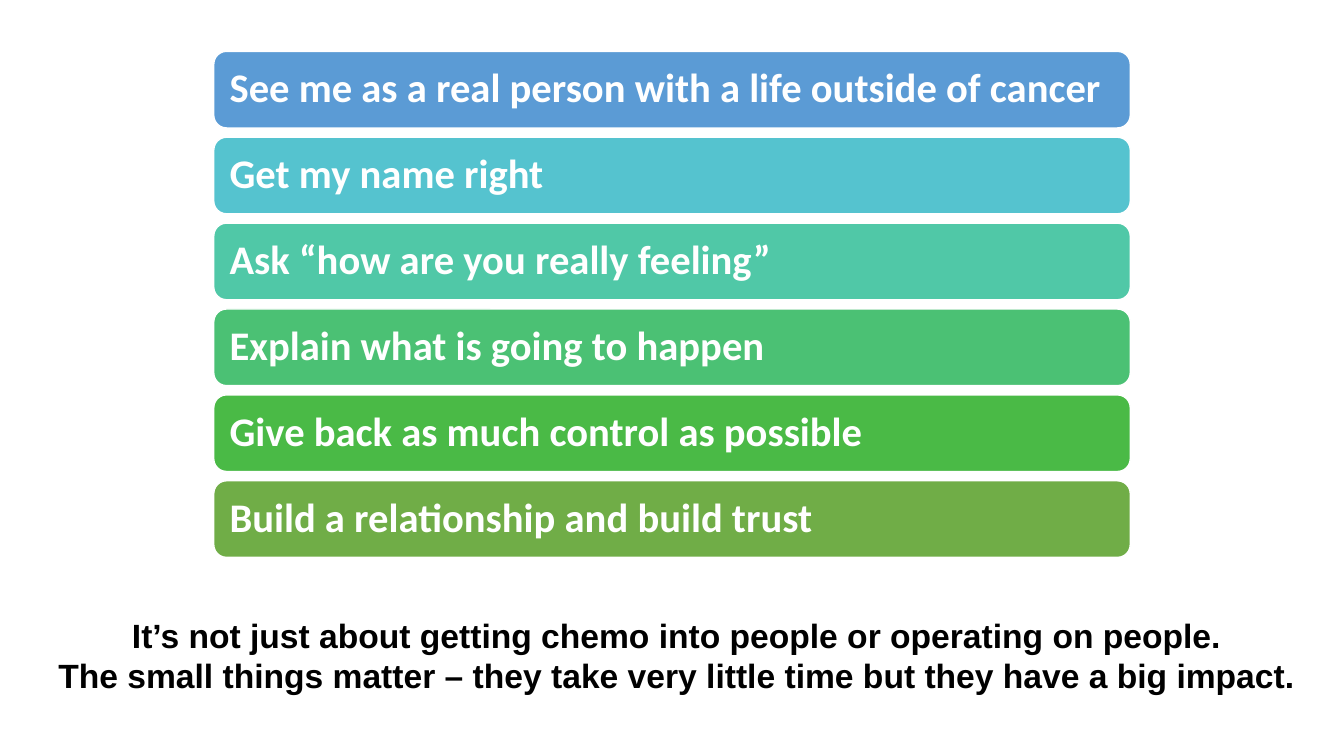
from pptx import Presentation
from pptx import util as u
from pptx.dml.color import RGBColor
from pptx.enum import shapes, text

WHITE = RGBColor(0xFF, 0xFF, 0xFF)
BLACK = RGBColor(0x00, 0x00, 0x00)
BLUE = RGBColor(0x5B, 0x9B, 0xD5)
CYAN = RGBColor(0x55, 0xC3, 0xCF)
TEAL = RGBColor(0x50, 0xC8, 0xA7)
MINT = RGBColor(0x4B, 0xC1, 0x74)
GREEN = RGBColor(0x4A, 0xBA, 0x46)
OLIVE = RGBColor(0x70, 0xAD, 0x47)

WISHES = [
    ("See me as a real person with a life outside of cancer", BLUE),
    ("Get my name right", CYAN),
    ("Ask “how are you really feeling”", TEAL),
    ("Explain what is going to happen", MINT),
    ("Give back as much control as possible", GREEN),
    ("Build a relationship and build trust", OLIVE),
]
CLOSING = [
    "It’s not just about getting chemo into people or operating on people.",
    "The small things matter – they take very little time but they have a big impact.",
]
TOP = 0.51
PITCH = (4.77 - TOP) / (len(WISHES) - 1)


class Board:
    bar_font = "Calibri"
    note_font = "Arial"
    inset = u.Inches(0.12)

    def __init__(self, slide):
        self.slide = slide

    def label(self, frame, lines, font, size, color, align):
        frame.word_wrap = True
        frame.text = "\n".join(lines)
        for para in frame.paragraphs:
            para.alignment = align
            para.font.name = font
            para.font.size = u.Pt(size)
            para.font.bold = True
            para.font.color.rgb = color

    def bar(self, wish, fill, left, top, width, height):
        box = self.slide.shapes.add_shape(
            shapes.MSO_SHAPE.ROUNDED_RECTANGLE,
            u.Inches(left), u.Inches(top), u.Inches(width), u.Inches(height))
        box.shadow.inherit = False
        box.fill.solid()
        box.fill.fore_color.rgb = fill
        box.line.color.rgb = WHITE
        box.line.width = u.Pt(1)
        frame = box.text_frame
        frame.margin_left = frame.margin_right = self.inset
        frame.margin_top = frame.margin_bottom = self.inset
        frame.vertical_anchor = text.MSO_ANCHOR.MIDDLE
        self.label(frame, [wish], self.bar_font, 29, WHITE, text.PP_ALIGN.LEFT)
        frame.paragraphs[0].line_spacing = 0.9

    def note(self, lines, left, top, width, height):
        box = self.slide.shapes.add_textbox(
            u.Inches(left), u.Inches(top), u.Inches(width), u.Inches(height))
        self.label(box.text_frame, lines, self.note_font, 24, BLACK, text.PP_ALIGN.CENTER)
        box.text_frame.auto_size = text.MSO_AUTO_SIZE.SHAPE_TO_FIT_TEXT


def main():
    deck = Presentation()
    deck.slide_width = u.Inches(13.33)
    deck.slide_height = u.Inches(7.5)
    board = Board(deck.slides.add_slide(deck.slide_layouts[6]))
    for row, (wish, fill) in enumerate(WISHES):
        board.bar(wish, fill, 2.12, TOP + row * PITCH, 9.09, 0.76)
    board.note(CLOSING, 0.35, 6.05, 12.72, 0.91)
    deck.save("out.pptx")


if __name__ == "__main__":
    main()
